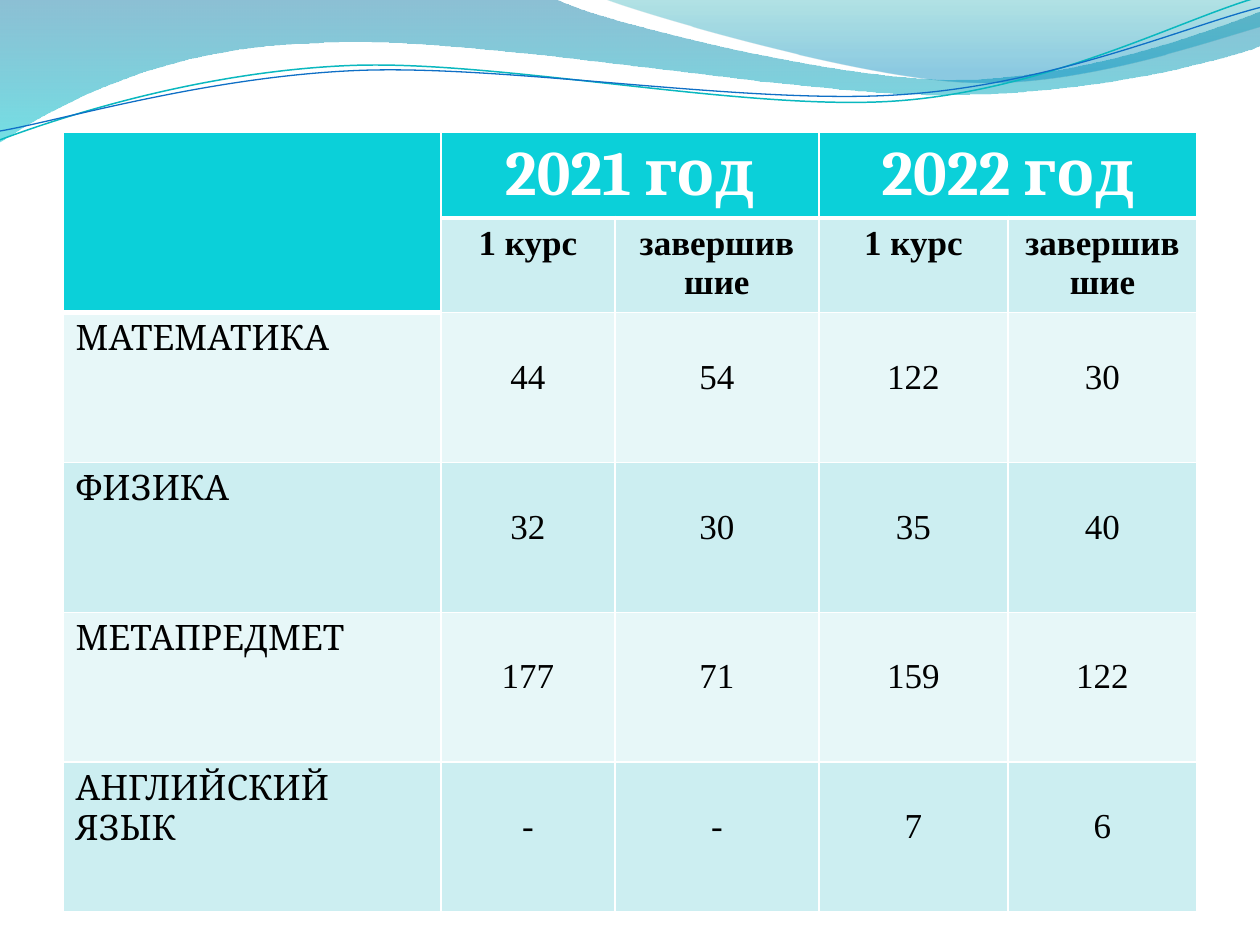
from math import cos, radians, sin

from lxml.etree import SubElement
from pptx import Presentation
from pptx.dml.color import RGBColor
from pptx.enum.text import PP_ALIGN
from pptx.oxml import parse_xml
from pptx.oxml.ns import nsdecls, qn
from pptx.util import Inches, Pt

WHITE = RGBColor(0xFF, 0xFF, 0xFF)
BLACK = RGBColor(0, 0, 0)
HEADER = RGBColor(0x0B, 0xD0, 0xD9)
BAND_DARK = RGBColor(0xCC, 0xEE, 0xF1)
BAND_LIGHT = RGBColor(0xE7, 0xF7, 0xF8)
WAVE_BLUE = RGBColor(0x00, 0x74, 0xA1)
WAVE_CYAN = RGBColor(0x00, 0xC6, 0xCF)
CREST_TEAL = RGBColor(0x00, 0xA1, 0xA9)
CREST_BLUE = RGBColor(0x00, 0x8B, 0xBF)
LINE_TEAL = RGBColor(0x0A, 0xB8, 0xBF)
LINE_BLUE = RGBColor(0x0F, 0x6F, 0xC6)

# Outlines in inches: two numbers are a straight step, six a Bezier curve.
# Gradient stops: position, colour, opacity in percent.
WAVES = [
    ([(0, 0), (4.4, -0.01), (4.76, 0.17, 6.64, 0.63, 7.58, 0.63),
      (8.53, 0.63, 9.58, 0.26, 10, 0.09), (10.01, 0.36),
      (9.83, 0.44, 8.7, 0.76, 7.46, 0.75), (6.22, 0.75, 3.82, 0.28, 2.57, 0.34),
      (1.29, 0.36, 0.46, 0.83, -0.01, 1.13), (0, 0)],
     [(0, WAVE_BLUE, 45), (1, WAVE_CYAN, 55)]),
    ([(4.79, -0.01), (5.09, 0.11, 6.82, 0.62, 7.69, 0.65),
      (8.56, 0.69, 9.61, 0.32, 10, 0.21), (10, 0), (4.79, -0.01)],
     [(0, CREST_TEAL, 30), (0.8, CREST_BLUE, 45)]),
]
# Outline, centre of rotation, colour, width in points.
WAVE_LINES = [
    ([(0, 1.11), (0.48, 0.93, 1.58, 0.57, 2.77, 0.52),
      (3.95, 0.47, 5.93, 0.89, 7.13, 0.8), (8.33, 0.71, 9.38, 0.15, 9.98, -0.02)],
     (4.99, 0.58), LINE_TEAL, 0.85),
    ([(0, 1.04), (0.47, 0.96, 1.64, 0.61, 2.83, 0.56),
      (4.03, 0.51, 5.97, 0.84, 7.17, 0.75), (8.36, 0.67, 9.41, 0.21, 10, 0.06)],
     (5, 0.59), LINE_BLUE, 0.75),
]
LINE_TILT = 2.7

COLUMN_WIDTHS = [3, 1.38, 1.62, 1.5, 1.5]
ROW_HEIGHTS = [0.68, 0.75] + [1.19] * 4
YEARS = ["2021 год", "2022 год"]
STAGES = ["1 курс", "завершившие"]
SUBJECTS = [
    ("МАТЕМАТИКА", "44", "54", "122", "30"),
    ("ФИЗИКА", "32", "30", "35", "40"),
    ("МЕТАПРЕДМЕТ", "177", "71", "159", "122"),
    ("АНГЛИЙСКИЙ ЯЗЫК", "-", "-", "7", "6"),
]
YEAR_FONT = {"name": "Cambria", "size": Pt(36), "bold": True}
STAGE_FONT = {"name": "Times New Roman", "size": Pt(20), "bold": True}
SUBJECT_FONT = {"name": "Cambria", "size": Pt(20), "bold": False}
VALUE_FONT = {"name": "Times New Roman", "size": Pt(20), "bold": False}
VALUE_TOP = 0.36


def step_points(step):
    return list(zip(step[::2], step[1::2]))


def turn_step(step, center, degrees):
    """Rotate the points of a step clockwise around a centre."""
    turn = radians(degrees)
    turned = []
    for x, y in step_points(step):
        dx, dy = x - center[0], y - center[1]
        turned += [center[0] + dx * cos(turn) - dy * sin(turn),
                   center[1] + dx * sin(turn) + dy * cos(turn)]
    return turned


def add_outline(page, steps):
    """Draw every step as straight segments, then join each triple into a curve."""
    points = [(Inches(x), Inches(y)) for step in steps for x, y in step_points(step)]
    builder = page.shapes.build_freeform(*points[0])
    builder.add_line_segments(points[1:], close=False)
    shape = builder.convert_to_shape()
    shape.shadow.inherit = False
    segments = iter(list(shape._element.iter(qn("a:lnTo"))))
    for step in steps[1:]:
        segment = next(segments)
        if len(step) == 6:
            segment.tag = qn("a:cubicBezTo")
            for _ in range(2):
                extra = next(segments)
                segment.append(extra[0])
                extra.getparent().remove(extra)
    return shape


def add_wave(page, steps, stops):
    wave = add_outline(page, steps)
    wave.line.fill.background()
    wave.fill.gradient()
    wave.fill.gradient_angle = 270
    for stop, (position, color, opacity) in zip(wave.fill.gradient_stops, stops):
        stop.position = position
        stop.color.rgb = color
    colors = wave._element.spPr.iter(qn("a:srgbClr"))
    for element, (position, color, opacity) in zip(colors, stops):
        SubElement(element, qn("a:alpha"), val=str(opacity * 1000))


def add_wave_line(page, steps, center, color, width):
    level = [turn_step(step, center, LINE_TILT) for step in steps]
    curve = add_outline(page, level)
    curve.rotation = 360 - LINE_TILT
    curve.fill.background()
    curve.line.color.rgb = color
    curve.line.width = Pt(width)


def set_borders(cell, top, bottom):
    properties = cell._tc.get_or_add_tcPr()
    widths = {"lnL": 1, "lnR": 1, "lnT": top, "lnB": bottom}
    for place, (side, width) in enumerate(widths.items()):
        properties.insert(place, parse_xml(
            f'<a:{side} {nsdecls("a")} w="{Pt(width)}"><a:solidFill>'
            f'<a:srgbClr val="{WHITE}"/></a:solidFill></a:{side}>'))


def write_cell(cell, text, font, color=BLACK, align=PP_ALIGN.CENTER):
    para = cell.text_frame.paragraphs[0]
    para.alignment = align
    span = para.add_run()
    span.text = text
    for name, value in font.items():
        setattr(span.font, name, value)
    span.font.color.rgb = color


def style_cells(table):
    """Fill every cell and draw heavier rules under the header cells."""
    for row in range(len(ROW_HEIGHTS)):
        for column in range(len(COLUMN_WIDTHS)):
            header_rows = 1 if column else 2
            cell = table.cell(row, column)
            cell.fill.solid()
            band = BAND_DARK if row % 2 else BAND_LIGHT
            cell.fill.fore_color.rgb = HEADER if row < header_rows else band
            set_borders(cell, 3 if row == header_rows else 1,
                        3 if row < header_rows else 1)


def add_results_table(page):
    frame = page.shapes.add_table(
        len(ROW_HEIGHTS), len(COLUMN_WIDTHS), Inches(0.5), Inches(1.05),
        Inches(sum(COLUMN_WIDTHS)), Inches(sum(ROW_HEIGHTS)))
    table = frame.table
    table.first_row = table.horz_banding = False
    for column, width in zip(table.columns, COLUMN_WIDTHS):
        column.width = Inches(width)
    for row, height in zip(table.rows, ROW_HEIGHTS):
        row.height = Inches(height)
    style_cells(table)

    table.cell(0, 0).merge(table.cell(1, 0))
    for index, year in enumerate(YEARS):
        first = 1 + index * len(STAGES)
        table.cell(0, first).merge(table.cell(0, first + 1))
        write_cell(table.cell(0, first), year, YEAR_FONT, WHITE)
        for offset, stage in enumerate(STAGES):
            write_cell(table.cell(1, first + offset), stage, STAGE_FONT)
    for row, (subject, *values) in enumerate(SUBJECTS, 2):
        write_cell(table.cell(row, 0), subject, SUBJECT_FONT, align=PP_ALIGN.LEFT)
        for column, value in enumerate(values, 1):
            cell = table.cell(row, column)
            cell.margin_top = Inches(VALUE_TOP)
            write_cell(cell, value, VALUE_FONT)


def main():
    deck = Presentation()
    deck.slide_width, deck.slide_height = Inches(10), Inches(7.5)
    page = deck.slides.add_slide(deck.slide_layouts[6])
    for wave in WAVES:
        add_wave(page, *wave)
    for wave_line in WAVE_LINES:
        add_wave_line(page, *wave_line)
    add_results_table(page)
    deck.save("out.pptx")


if __name__ == "__main__":
    main()
